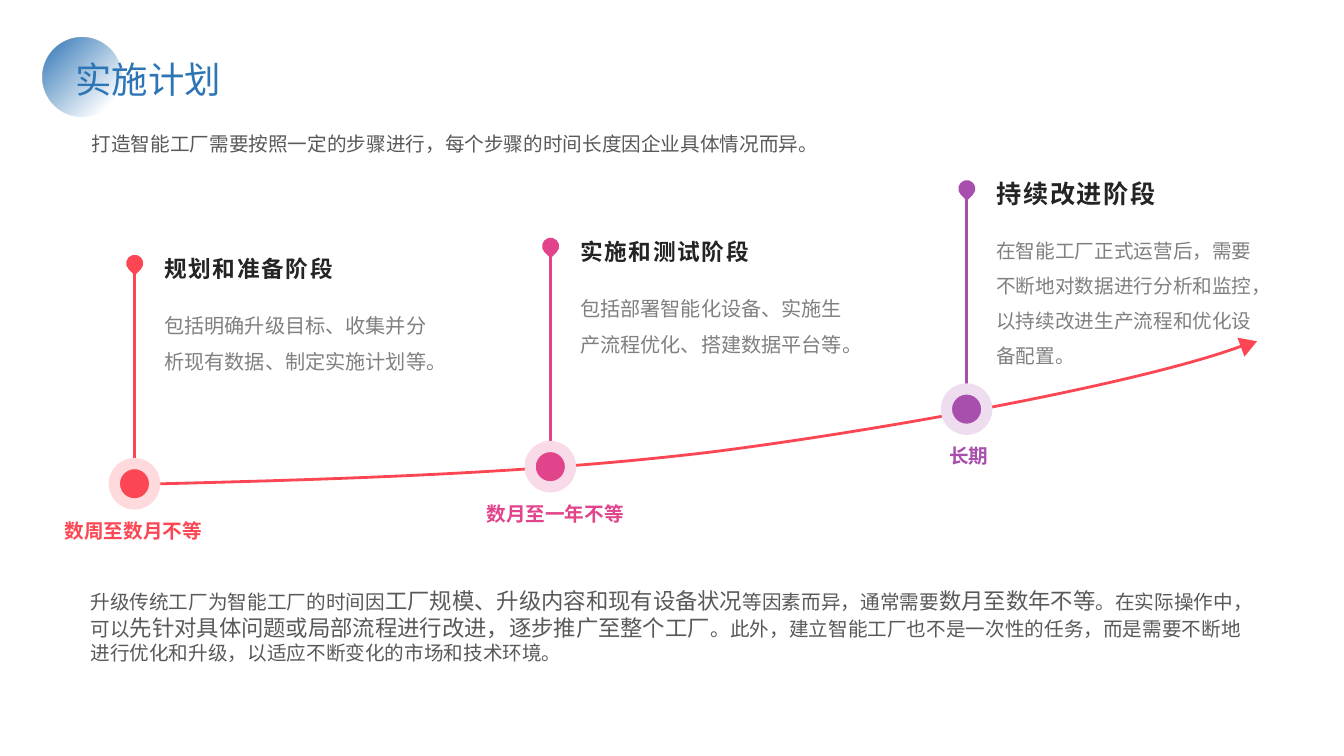
from dataclasses import dataclass
from itertools import cycle

from lxml import etree
from pptx import Presentation
from pptx.dml.color import RGBColor
from pptx.enum.shapes import MSO_CONNECTOR, MSO_SHAPE
from pptx.enum.text import MSO_ANCHOR, MSO_AUTO_SIZE, PP_ALIGN
from pptx.oxml import parse_xml
from pptx.oxml.ns import nsdecls, qn
from pptx.util import Cm, Pt

OVAL, DROP, HEAD = MSO_SHAPE.OVAL, MSO_SHAPE.TEAR, MSO_SHAPE.ISOSCELES_TRIANGLE
LINE = MSO_CONNECTOR.STRAIGHT
TOP, MIDDLE = MSO_ANCHOR.TOP, MSO_ANCHOR.MIDDLE
GROW, FIXED = MSO_AUTO_SIZE.SHAPE_TO_FIT_TEXT, MSO_AUTO_SIZE.NONE
LEFT = PP_ALIGN.LEFT


@dataclass
class Theme:
    font: str = "Noto Sans CJK SC"
    blue: str = "2E75B6"
    red: str = "FC4653"
    pink: str = "E1448B"
    plum: str = "A84FAE"
    dark: str = "242424"
    text: str = "595959"
    gray: str = "808080"
    title: float = 26
    base: float = 14
    strong: float = 16
    stroke: float = 2
    ring: float = 8


theme = Theme()
deck = Presentation()
deck.slide_width, deck.slide_height = Cm(33.87), Cm(19.05)
slide = deck.slides.add_slide(deck.slide_layouts[5])
shapes = slide.shapes


def write(*parts, at, sizes, color, box=None, bold=False, gap=None,
          space=None, anchor=TOP, fit=FIXED):
    """Fill a box with one paragraph; its parts take the sizes in turn."""
    place = [Cm(v) for v in at]
    box = box or shapes.add_textbox(*place)
    box.left, box.top, box.width, box.height = place
    frame = box.text_frame
    frame.word_wrap, frame.auto_size = True, fit
    frame.vertical_anchor = anchor
    para = frame.paragraphs[0]
    para.alignment = LEFT
    if space:
        para.line_spacing = space
    for part, size in zip(parts, cycle(sizes)):
        run = para.add_run()
        run.text = part
        font = run.font
        font.name, font.size, font.bold = theme.font, Pt(size), bold
        font.color.rgb = RGBColor.from_string(color)
        props = font._element
        etree.SubElement(props, qn("a:ea")).set("typeface", theme.font)
        if gap:
            props.set("spc", str(round(gap * 100)))


def draw(kind, at, color, turn=0, ring=None):
    shape = shapes.add_shape(kind, *[Cm(v) for v in at])
    shape.shadow.inherit = False
    shape.fill.solid()
    shape.fill.fore_color.rgb = RGBColor.from_string(color)
    shape.rotation = turn
    if ring:
        shape.line.color.rgb = RGBColor.from_string(ring)
        shape.line.width = Pt(theme.ring)
    else:
        shape.line.fill.background()
    return shape


# Title, with the fading disc behind it
disc = draw(OVAL, (1.08, 0.95, 1.98, 1.98), theme.blue)
solid = disc.element.spPr.find(qn("a:solidFill"))
solid.getparent().replace(solid, parse_xml(
    f'<a:gradFill {nsdecls("a")} rotWithShape="1"><a:gsLst>'
    f'<a:gs pos="15000"><a:srgbClr val="{theme.blue}"><a:alpha val="0"/></a:srgbClr></a:gs>'
    f'<a:gs pos="100000"><a:srgbClr val="{theme.blue}"/></a:gs></a:gsLst>'
    '<a:path path="circle"><a:fillToRect l="100000" t="100000"/></a:path></a:gradFill>'))
shapes.title.element.addprevious(disc.element)
write("实施计划", box=shapes.title, at=(1.65, 1.32, 18.47, 1.37),
      sizes=[theme.title], color=theme.blue, fit=GROW)

# Rising curve: a start point, then two cubic spans of three points
curve = [(2.95, 12.22), (8.1, 12.09), (13.26, 11.96), (18.01, 11.38),
         (22.76, 10.77), (29.24, 9.55), (31.5, 8.64)]
start, *rest = [(Cm(x), Cm(y)) for x, y in curve]
pen = shapes.build_freeform(*start)
pen.add_line_segments(rest, close=False)
trend = pen.convert_to_shape()
trend.shadow.inherit = False
trend.fill.background()
trend.line.color.rgb = RGBColor.from_string(theme.red)
trend.line.width = Pt(theme.stroke)
steps = list(trend.element.iter(qn("a:lnTo")))
for i in range(0, len(steps), 3):
    span = etree.Element(qn("a:cubicBezTo"))
    steps[i].addprevious(span)
    for step in steps[i:i + 3]:
        span.append(step[0])
        step.getparent().remove(step)

# Stages: node centre, colours, label with its shift and width, heading, body
stages = [
    (3.39, 12.19, theme.red, "FEDADD", "数周至数月不等", 2.01, 4.06,
     "规划和准备阶段", 16.2, "包括明确升级目标、收集并分析现有数据、制定实施计划等。", 14.4),
    (13.87, 11.76, theme.pink, "F9DAE8", "数月至一年不等", 1.86, 4.06,
     "实施和测试阶段", 16.2, "包括部署智能化设备、实施生产流程优化、搭建数据平台等。", 14.4),
    (24.36, 10.31, theme.plum, "EEDCEF", "长期", 0.69, 2.74,
     "持续改进阶段", 18,
     "在智能工厂正式运营后，需要不断地对数据进行分析和监控，以持续改进生产流程和优化设备配置。", 14),
]
for x, y, color, ring, label, shift, width, head, large, body, small in stages:
    stem = shapes.add_connector(LINE, Cm(x), Cm(y - 5.4), Cm(x), Cm(y - 0.58))
    stem.line.color.rgb = RGBColor.from_string(color)
    stem.line.width = Pt(theme.stroke)
    etree.SubElement(stem.element.spPr, qn("a:effectLst"))
    write(label, at=(x - shift, y + 0.76, width, 1.45),
          sizes=[theme.base], color=color, bold=True)
    draw(OVAL, (x - 0.51, y - 0.51, 1.02, 1.02), color, ring=ring)
    write(body, at=(x + 0.5, y - 4.72, 7.21, 2.18),
          sizes=[small], color=theme.gray, space=1.5)
    write(head, at=(x + 0.5, y - 5.97, 5, 1.07), sizes=[large],
          color=theme.dark, bold=True, gap=1.2, anchor=MIDDLE)
    draw(DROP, (x - 0.21, y - 5.77, 0.43, 0.43), color, turn=135)

draw(HEAD, (31.22, 8.46, 0.51, 0.43), theme.red, turn=69.7)

# Opening line and closing summary
write("打造智能工厂需要按照一定的步骤进行，每个步骤的时间长度因企业具体情况而异。",
      at=(2.06, 3.2, 29.74, 0.86), sizes=[theme.base], color=theme.text, fit=GROW)
write("升级传统工厂为智能工厂的时间因", "工厂规模、升级内容和现有设备状况",
      "等因素而异，通常需要", "数月至数年不等", "。在实际操作中，可以",
      "先针对具体问题或局部流程进行改进，逐步推广至整个工厂",
      "。此外，建立智能工厂也不是一次性的任务，而是需要不断地进行优化和升级，"
      "以适应不断变化的市场和技术环境。",
      at=(2.03, 14.68, 29.74, 2.21), sizes=[theme.base, theme.strong],
      color=theme.text, fit=GROW)

deck.save("out.pptx")
